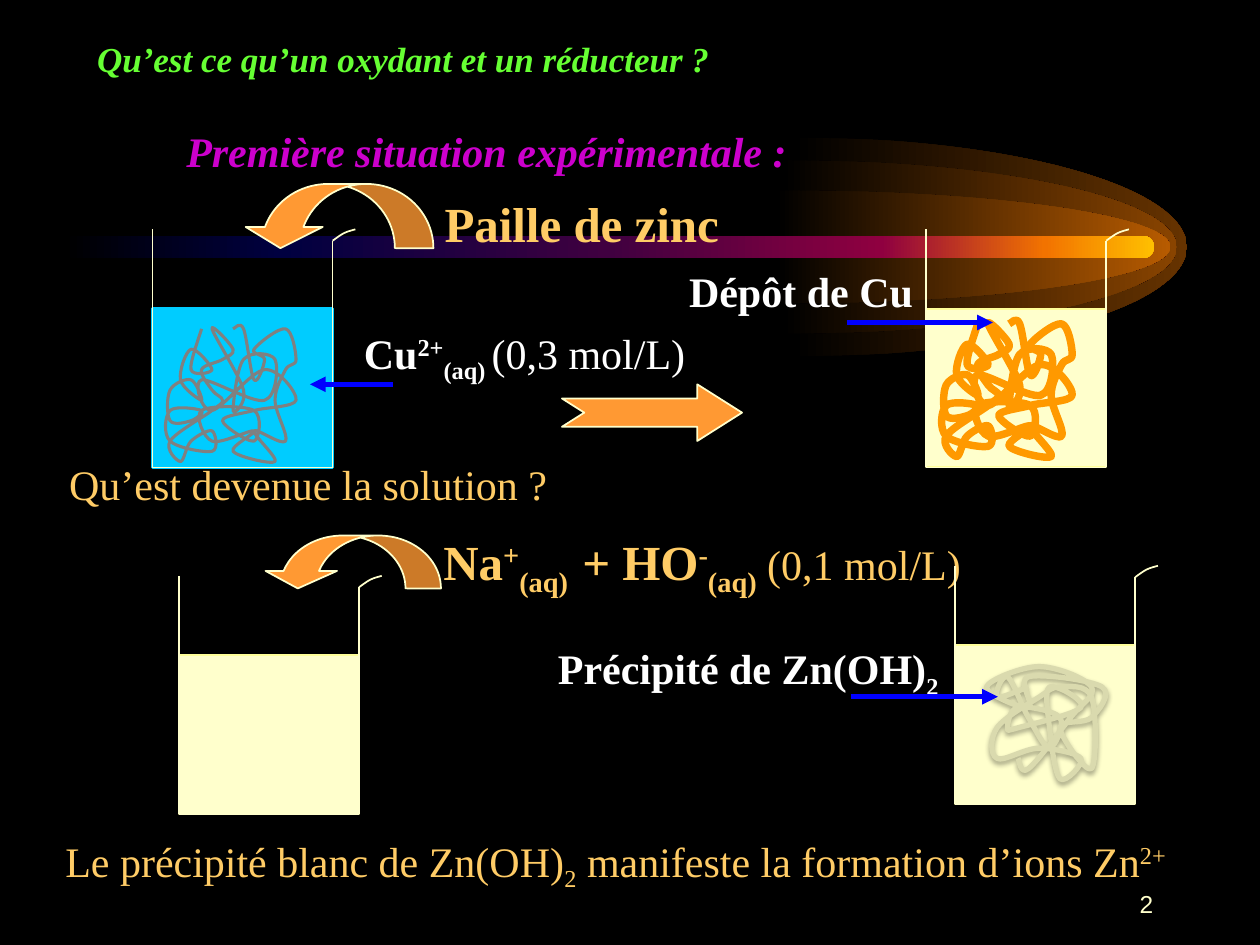
import math

from lxml import etree
from pptx import Presentation
from pptx import util as u
from pptx.dml.color import RGBColor
from pptx.enum import shapes, text
from pptx.oxml import ns

INK = {
    "black": "000000", "green": "66FF33", "pink": "CC00CC", "gold": "FFCC66",
    "white": "FFFFFF", "cream": "FFFFCC", "pale": "FFFF99", "cyan": "00CCFF",
    "orange": "FF9933", "copper": "FF9900", "zinc": "808080",
    "solid": "DADAAE", "blue": "0000FF",
}
SUP, SUB = 30, -25
STEP_X, STEP_Y = 1 / 12, 0.081

# Knots of the tangled wires, in grid steps
WOOL = [
    (3, 0), (2, 4), (4, 4), (2, 2), (1, 5), (3, 7), (2, 5), (0, 6), (0, 9),
    (2, 9), (3, 8), (0, 8), (0, 11), (4, 12), (4, 10), (2, 11), (1, 13),
    (0, 11), (4, 8), (5, 7), (4, 6), (3, 4), (5, 3), (6, 2), (4, 0), (7, 6),
    (6, 8), (7, 3), (10, 3), (9, 7), (3, 5), (4, 8), (9, 4), (12, 7), (8, 8),
    (5, 9), (8, 11), (8, 8), (3, 8), (4, 11), (8, 10), (6, 12), (10, 13),
    (8, 10), (11, 11), (10, 7), (11, 4), (12, 3), (11, 0), (8, 2), (9, 3),
    (8, 5), (7, 0), (6, 0),
]
CLUMP = [
    (4, 2), (1, 3), (2, 1), (4, 5), (6, 8), (7, 5), (3, 4), (2, 6), (3, 6),
    (9, 4), (6, 2), (6, 6), (7, 11), (9, 9), (5, 8), (1, 9), (1, 6), (5, 3),
    (7, 2), (10, 3), (10, 10), (7, 6), (10, 5), (11, 2), (4, 1), (4, 4),
    (0, 2), (5, 0), (10, 2), (8, 5), (4, 10), (3, 9),
]


def rgb(name):
    return RGBColor.from_string(INK[name])


def box(*dims):
    return [u.Inches(d) for d in dims]


def write(frame, runs, size=24, ink="gold", bold=False, ital=False,
          font="Times New Roman", align=text.PP_ALIGN.LEFT,
          anchor=text.MSO_ANCHOR.TOP, wrap=False):
    """Fill a frame with runs: (words, baseline percent, own format)."""
    frame.word_wrap = wrap
    frame.vertical_anchor = anchor
    para = frame.paragraphs[0]
    para.alignment = align
    for words, base, own in runs:
        run = para.add_run()
        run.text = words
        run.font.name = font
        run.font.size = u.Pt(own.get("size", size))
        run.font.bold = own.get("bold", bold)
        run.font.italic = ital
        run.font.color.rgb = rgb(ink)
        if base:
            run.font._element.set("baseline", str(base * 1000))


def label(slide, dims, *runs, **form):
    """Add a text box; a run is a string or (words, baseline[, format])."""
    full = [(r, 0, {}) if isinstance(r, str) else (*r, {})[:3] for r in runs]
    write(slide.shapes.add_textbox(*box(*dims)).text_frame, full, **form)


def paint(shape, fill=None, line=None, width=1):
    shape.shadow.inherit = False
    if fill:
        shape.fill.solid()
        shape.fill.fore_color.rgb = rgb(fill)
    else:
        shape.fill.background()
    if line:
        shape.line.color.rgb = rgb(line)
        shape.line.width = u.Pt(width)
    else:
        shape.line.fill.background()


def fade(shape, stops):
    """Give a left-to-right gradient from (percent, colour) stops."""
    paint(shape)
    shape.fill.gradient()
    shape.fill.gradient_angle = 0
    held = shape._element.spPr.find(".//" + ns.qn("a:gsLst"))
    for old in list(held):
        held.remove(old)
    for pos, tint in stops:
        stop = etree.SubElement(held, ns.qn("a:gs"), pos=str(pos * 1000))
        etree.SubElement(stop, ns.qn("a:srgbClr"), val=tint)


def preset(slide, kind, dims, adj=(), flip=False):
    shape = slide.shapes.add_shape(kind, *box(*dims))
    for i, value in enumerate(adj):
        shape.adjustments[i] = value
    if flip:
        shape._element.spPr.xfrm.set("flipH", "1")
    return shape


def curve(slide, knots, close=False):
    """Draw a freeform whose segments bend smoothly through the knots."""
    first, *rest = [box(*knot) for knot in knots]
    pen = slide.shapes.build_freeform(*first)
    pen.add_line_segments(rest, close=close)
    shape = pen.convert_to_shape()
    dots = [(int(p.get("x")), int(p.get("y")))
            for p in shape._element.spPr.iter(ns.qn("a:pt"))]
    ends = [dots[0], *dots, dots[-1]]
    steps = list(shape._element.spPr.iter(ns.qn("a:lnTo")))
    for step, a, b, c, d in zip(steps, ends, ends[1:], ends[2:], ends[3:]):
        bend = etree.Element(ns.qn("a:cubicBezTo"))
        leave = [q + (r - p) / 6 for p, q, r in zip(a, b, c)]
        reach = [q - (r - p) / 6 for p, q, r in zip(b, c, d)]
        for x, y in (leave, reach, c):
            etree.SubElement(bend, ns.qn("a:pt"), x=str(round(x)), y=str(round(y)))
        step.getparent().replace(step, bend)
    return shape


def tangle(slide, left, top, knots, ink, width):
    grid = [(left + x * STEP_X, top + y * STEP_Y) for x, y in knots]
    shape = curve(slide, grid)
    paint(shape, line=ink, width=width)
    return shape


def cast(shape):
    """Drop a soft shadow straight down."""
    glow = shape._element.spPr.find(ns.qn("a:effectLst"))
    drop = etree.SubElement(glow, ns.qn("a:outerShdw"), blurRad=str(u.Pt(3.1)),
                            dist=str(u.Pt(1.8)), dir="5400000", rotWithShape="0")
    tint = etree.SubElement(drop, ns.qn("a:srgbClr"), val=INK["black"])
    etree.SubElement(tint, ns.qn("a:alpha"), val="35000")


def rule(slide, start, end, ink="cream", width=1, arrow=False):
    line = slide.shapes.add_connector(
        shapes.MSO_CONNECTOR.STRAIGHT, *box(*start, *end))
    line.line.color.rgb = rgb(ink)
    line.line.width = u.Pt(width)
    if arrow:
        etree.SubElement(line.line._get_or_add_ln(), ns.qn("a:tailEnd"),
                         type="triangle")
    etree.SubElement(line._element.spPr, ns.qn("a:effectLst"))


def point(slide, start, end):
    rule(slide, start, end, "blue", 3, True)


def beaker(slide, left, top, fill="cream", edge="pale", width=1):
    right, base = left + 1.43, top + 1.89
    paint(preset(slide, shapes.MSO_SHAPE.RECTANGLE,
                 (left, top + 0.63, 1.43, 1.26)), fill, edge, width)
    rule(slide, (left, top), (left, base))
    rule(slide, (right, top + 0.09), (right, base))
    rule(slide, (left, base), (right, base))
    lip = [(right, top + 0.09), (right + 0.09, top + 0.03), (right + 0.18, top)]
    paint(curve(slide, lip), line="cream")


def pour(slide, dims, adj):
    paint(preset(slide, shapes.MSO_SHAPE.CURVED_DOWN_ARROW, dims, adj, True),
          "orange", "cream")


def comet(slide):
    for mid, high, tint in ((6.29, 0.87, "663300"), (6.21, 0.69, "894400"),
                            (6.16, 0.45, "B75B00")):
        turns = [math.radians(a) for a in range(-90, 91, 15)]
        half = [(mid + 3.13 * math.cos(a), 1.96 + high * math.sin(a))
                for a in turns]
        fade(curve(slide, half, True), [(0, INK["black"]), (100, tint)])
    bar = preset(slide, shapes.MSO_SHAPE.ROUNDED_RECTANGLE,
                 (0.5, 1.87, 8.66, 0.18), [0.5])
    fade(bar, [(0, INK["black"]), (20, "000040"), (50, "400040"),
               (75, "8F0040"), (90, "F27300"), (100, "FFBF00")])


def head(slide, words):
    title = slide.shapes.title
    title.left, title.top, title.width, title.height = box(0.67, 0.25, 8.43, 0.44)
    write(title.text_frame, [(words, 0, {})], size=20, ink="green",
          bold=True, ital=True, wrap=True)


def copper(slide):
    label(slide, (1.38, 0.95, 5.01, 0.51), "Première situation expérimentale :",
          ink="pink", bold=True, ital=True)
    beaker(slide, 1.21, 1.82, "cyan", "cyan", 1.5)
    label(slide, (3.43, 1.49, 2.4, 0.57), "Paille de zinc", size=28, bold=True)
    pour(slide, (1.92, 1.46, 1.52, 0.51), (0.6, 1.2, 0.33))
    paint(preset(slide, shapes.MSO_SHAPE.NOTCHED_RIGHT_ARROW,
                 (4.46, 3.05, 1.43, 0.45), (0.5, 0.79)), "orange", "cream")
    label(slide, (2.79, 2.55, 2.84, 0.83), "Cu", ("2+", SUP), ("(aq) ", SUB),
          ("(0,3 mol/L)", 0, {"bold": False}), ink="white", bold=True)
    point(slide, (3.12, 3.05), (2.46, 3.05))
    tangle(slide, 1.35, 2.61, WOOL, "zinc", 1.75)
    beaker(slide, 7.35, 1.82)
    tangle(slide, 7.51, 2.57, WOOL, "copper", 4.25)
    label(slide, (5.37, 2.06, 1.98, 0.5), "Dépôt de Cu", ink="white", bold=True)
    point(slide, (6.72, 2.56), (7.88, 2.56))


def soda(slide):
    beaker(slide, 1.42, 4.57)
    pour(slide, (2.08, 4.25, 1.42, 0.42), (0.67, 1.35, 0.33))
    label(slide, (3.42, 4.17, 4.5, 0.9), "Na", ("+", SUP), ("(aq)  ", SUB),
          "+ HO", ("-", SUP), ("(aq)", SUB),
          (" (0,1 mol/L)", 0, {"size": 24, "bold": False}), size=28, bold=True)
    beaker(slide, 7.58, 4.49)
    cast(tangle(slide, 7.83, 5.29, CLUMP, "solid", 3))
    label(slide, (4.33, 5.05, 3.26, 0.51), "Précipité de Zn(OH)", ("2", SUB),
          ink="white", bold=True)
    point(slide, (6.75, 5.53), (7.92, 5.53))


def main():
    deck = Presentation()
    deck.slide_width, deck.slide_height = box(10, 7.5)
    slide = deck.slides.add_slide(deck.slide_layouts[5])
    slide.background.fill.solid()
    slide.background.fill.fore_color.rgb = rgb("black")
    comet(slide)
    head(slide, "Qu’est ce qu’un oxydant et un réducteur ?")
    copper(slide)
    soda(slide)
    label(slide, (0.45, 3.59, 4.08, 0.5), "Qu’est devenue la solution ?")
    label(slide, (0.42, 6.58, 8.98, 0.5), "Le précipité blanc de Zn(OH)",
          ("2", SUB), " manifeste la formation d’ions Zn", ("2+", SUP))
    label(slide, (7.17, 6.92, 2.08, 0.5), "2", size=14, ink="cream",
          font="Arial", align=text.PP_ALIGN.RIGHT,
          anchor=text.MSO_ANCHOR.MIDDLE, wrap=True)
    deck.save("out.pptx")


if __name__ == "__main__":
    main()
